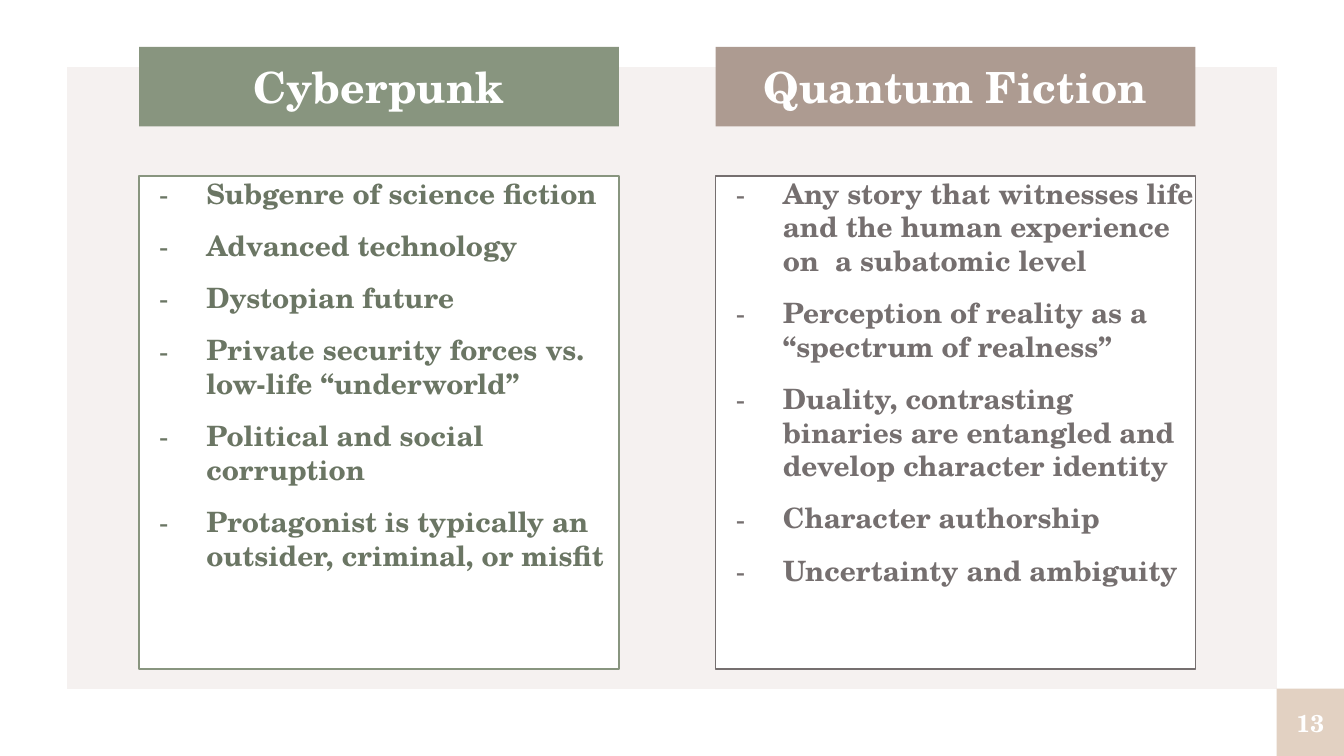
from lxml import etree
from pptx import Presentation
from pptx import util as u
from pptx.dml.color import RGBColor
from pptx.enum import shapes, text
from pptx.oxml.ns import qn

FONT = "TeX Gyre Schola"
WHITE = "FFFFFF"
WIDTH = u.Inches(10)
HEIGHT = WIDTH * 9 // 16
FIRST_COLUMN, COLUMN_STEP, COLUMN_WIDTH = 10.35, 42.9, 35.7
HEADING_ROW = (6.22, 10.5)
LIST_ROW = (23.3, 65.2)

COLUMNS = [
    ("Cyberpunk", "88957F", "88957F", "6B7664", [
        "Subgenre of science fiction",
        "Advanced technology",
        "Dystopian future",
        "Private security forces vs. low-life “underworld”",
        "Political and social corruption",
        "Protagonist is typically an outsider, criminal, or misfit",
    ]),
    ("Quantum Fiction", "AD9B91", "756F6F", "756F6F", [
        "Any story that witnesses life and the human experience on  a subatomic level",
        "Perception of reality as a “spectrum of realness”",
        "Duality, contrasting binaries are entangled and develop character identity",
        "Character authorship",
        "Uncertainty and ambiguity",
    ]),
]


def paint(color_format, color):
    color_format.rgb = RGBColor.from_string(color)


def fill_solid(fill, color):
    fill.solid()
    paint(fill.fore_color, color)


def add_block(slide, left, top, width, height, fill, line=None,
              kind=shapes.MSO_SHAPE.RECTANGLE):
    shape = slide.shapes.add_shape(
        kind, round(WIDTH * left / 100), round(HEIGHT * top / 100),
        round(WIDTH * width / 100), round(HEIGHT * height / 100))
    shape.shadow.inherit = False
    fill_solid(shape.fill, fill)
    if line:
        fill_solid(shape.line.fill, line)
        shape.line.width = u.Pt(0.75)
    else:
        shape.line.fill.background()
    return shape


def add_dash(paragraph, color):
    properties = paragraph._p.get_or_add_pPr()
    properties.set("marL", str(u.Inches(0.5)))
    properties.set("indent", str(u.Inches(-0.35)))
    bullet_color = etree.SubElement(properties, qn("a:buClr"))
    etree.SubElement(bullet_color, qn("a:srgbClr"), val=color)
    etree.SubElement(properties, qn("a:buFont"), typeface=FONT)
    etree.SubElement(properties, qn("a:buChar"), char="-")


def write(shape, lines, size, color, align=text.PP_ALIGN.CENTER,
          anchor=text.MSO_ANCHOR.MIDDLE, inset=0, space_before=0, dashes=False):
    frame = shape.text_frame
    frame.word_wrap = True
    frame.vertical_anchor = anchor
    frame.margin_left = frame.margin_right = u.Inches(inset)
    frame.margin_top = frame.margin_bottom = u.Inches(inset)
    for index, line in enumerate(lines):
        paragraph = frame.add_paragraph() if index else frame.paragraphs[0]
        paragraph.alignment = align
        paragraph.space_before = u.Pt(space_before)
        if dashes:
            add_dash(paragraph, color)
        run = paragraph.add_run()
        run.text = line
        run.font.name = FONT
        run.font.size = u.Pt(size)
        run.font.bold = True
        paint(run.font.color, color)


def add_frame(slide):
    frame = add_block(slide, 0, 0, 100, 100, WHITE, kind=shapes.MSO_SHAPE.FRAME)
    frame.adjustments[0] = 0.0885


def add_list(slide, left, outline, color, points):
    top, height = LIST_ROW
    box = add_block(slide, left, top, COLUMN_WIDTH, height, WHITE, outline)
    write(box, points, 15, color, align=text.PP_ALIGN.LEFT,
          anchor=text.MSO_ANCHOR.TOP, space_before=10, dashes=True)


def add_heading(slide, left, title, fill):
    top, height = HEADING_ROW
    heading = add_block(slide, left, top, COLUMN_WIDTH, height, fill)
    write(heading, [title], 23, WHITE, anchor=text.MSO_ANCHOR.TOP, inset=0.1)
    heading.text_frame.auto_size = text.MSO_AUTO_SIZE.SHAPE_TO_FIT_TEXT


def add_page_number(slide, number):
    badge = add_block(slide, 95, 91.1, 5, 8.9, "E2D1C2")
    write(badge, [number], 13, WHITE)


def main():
    presentation = Presentation()
    presentation.slide_width, presentation.slide_height = WIDTH, HEIGHT
    slide = presentation.slides.add_slide(presentation.slide_layouts[6])
    fill_solid(slide.background.fill, "F5F1F0")
    add_frame(slide)
    columns = list(enumerate(COLUMNS))
    for index, (_, _, outline, color, points) in columns:
        add_list(slide, FIRST_COLUMN + index * COLUMN_STEP, outline, color, points)
    add_page_number(slide, "13")
    for index, (title, fill, _, _, _) in columns:
        add_heading(slide, FIRST_COLUMN + index * COLUMN_STEP, title, fill)
    presentation.save("out.pptx")


if __name__ == "__main__":
    main()
